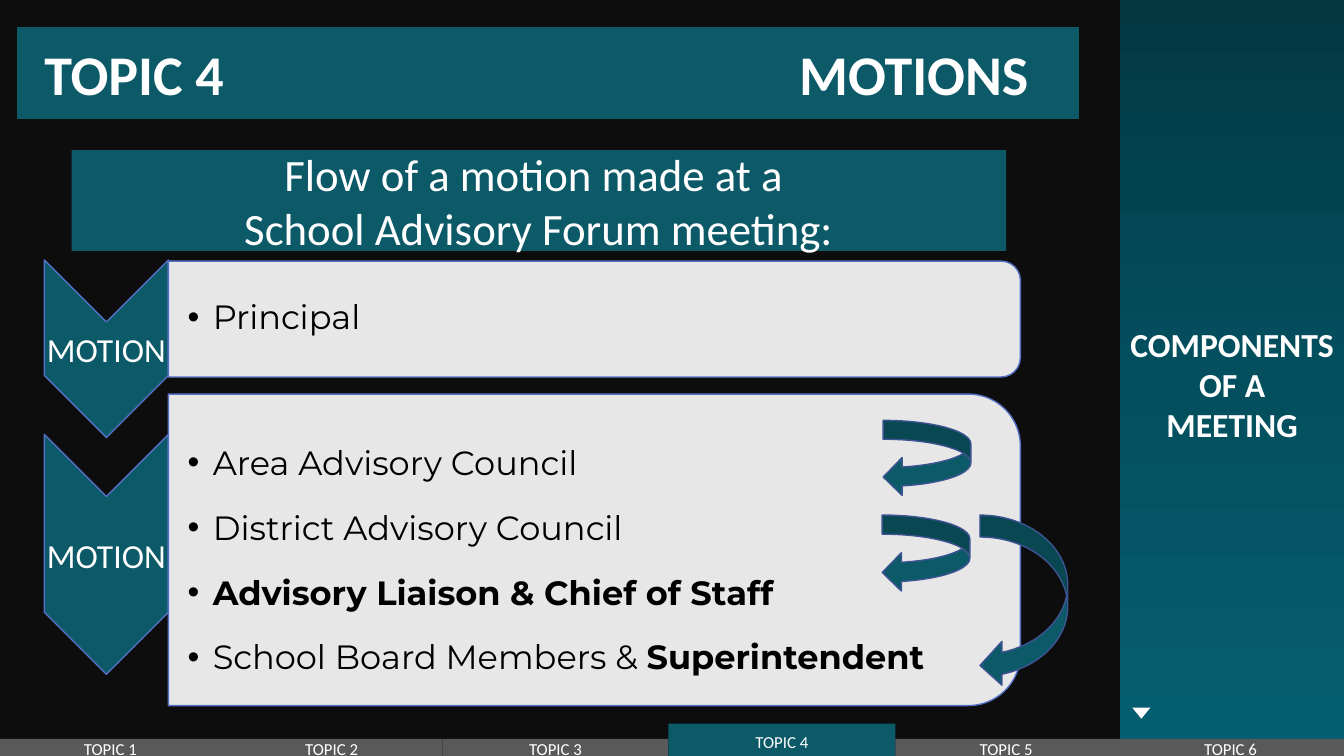
import copy
import dataclasses
import itertools

import pptx
import pptx.dml.color
import pptx.enum.shapes
import pptx.enum.text
import pptx.oxml.ns
import pptx.oxml.xmlchemy
import pptx.util

Inches = pptx.util.Inches
Pt = pptx.util.Pt
Shape = pptx.enum.shapes.MSO_SHAPE
Align = pptx.enum.text.PP_ALIGN
Anchor = pptx.enum.text.MSO_ANCHOR
qn = pptx.oxml.ns.qn


@dataclasses.dataclass(frozen=True)
class Theme:
    background: str = "0D0D0D"
    teal: str = "0C5968"
    gray: str = "595959"
    white: str = "FFFFFF"
    black: str = "000000"
    panel_line: str = "5370C5"
    arrow_line: str = "3D5392"
    sidebar: tuple = ((0, "033742"), (0.5, "044F5E"), (1, "055E6F"))
    sans: str = "Calibri"
    list_font: str = "Montserrat"
    title_size: int = 40
    subtitle_size: int = 32
    text_size: int = 24
    tab_size: int = 12


def rgb(value):
    return pptx.dml.color.RGBColor.from_string(value)


def set_values(target, values):
    for name, value in values.items():
        setattr(target, name, value)


def add_element(parent, tag, **attributes):
    element = parent.makeelement(qn(tag), attributes)
    parent.append(element)
    return element


class SlideBuilder:
    def __init__(self, slide, theme):
        self.slide = slide
        self.theme = theme
        slide.background.fill.solid()
        slide.background.fill.fore_color.rgb = rgb(theme.background)

    def shape(self, kind, box, fill, line=None, rotation=0, opacity=None):
        shape = self.slide.shapes.add_shape(kind, *map(Inches, box))
        shape.shadow.inherit = False
        shape.rotation = rotation
        shape.fill.solid()
        shape.fill.fore_color.rgb = rgb(fill)
        if opacity is not None:
            color = shape._element.spPr.find(qn("a:solidFill"))[0]
            add_element(color, "a:alpha", val=str(opacity * 1000))
        if line:
            shape.line.color.rgb = rgb(line)
            shape.line.width = Pt(1)
        else:
            shape.line.fill.background()
        return shape

    def gradient(self, shape, stops):
        """Fill a shape from top to bottom with three colour stops."""
        shape.fill.gradient()
        shape.fill.gradient_angle = 270
        stop_list = shape._element.spPr.find(".//" + qn("a:gsLst"))
        stop_list.insert(1, copy.deepcopy(stop_list[0]))
        for stop, (position, color) in zip(shape.fill.gradient_stops, stops):
            stop.position = position
            stop.color.rgb = rgb(color)

    def frame(self, shape, margins=(0.1, 0.05, 0.1, 0.05)):
        sides = ("margin_left", "margin_top", "margin_right", "margin_bottom")
        values = dict(zip(sides, map(Inches, margins)))
        values.update(word_wrap=True, vertical_anchor=Anchor.MIDDLE,
                      auto_size=pptx.enum.text.MSO_AUTO_SIZE.NONE)
        set_values(shape.text_frame, values)
        return shape.text_frame

    def paragraph(self, frame, index, runs, font, layout, mark=None):
        """Write (text, bold) runs; mark adds a bullet or tab first."""
        paragraph = frame.add_paragraph() if index else frame.paragraphs[0]
        if mark:
            mark(paragraph._p.get_or_add_pPr())
        set_values(paragraph, {"space_before": Pt(0), **layout})
        for text, bold in runs:
            run = paragraph.add_run()
            run.text = text
            color = font["color"]
            set_values(run.font, {"name": font["name"], "bold": bold,
                                  "size": Pt(font["size"])})
            run.font.color.rgb = rgb(color)

    def centred(self, shape, lines, size, bold=False, **frame_options):
        frame = self.frame(shape, **frame_options)
        font = {"name": self.theme.sans, "size": size, "color": self.theme.white}
        for index, line in enumerate(lines):
            self.paragraph(frame, index, [(line, bold)], font,
                           {"alignment": Align.CENTER})

    def place(self, placeholder, box):
        names = ("left", "top", "width", "height")
        set_values(placeholder, dict(zip(names, map(Inches, box))))
        placeholder._element.getparent().append(placeholder._element)

    def title(self, text, box, tab_position):
        title = self.slide.shapes.title
        self.place(title, box)
        title.fill.solid()
        title.fill.fore_color.rgb = rgb(self.theme.teal)

        def right_tab(properties):
            tabs = add_element(properties, "a:tabLst")
            add_element(tabs, "a:tab", pos=str(Inches(tab_position)), algn="r")

        font = {"name": self.theme.sans, "size": self.theme.title_size,
                "color": self.theme.white}
        self.paragraph(self.frame(title, (0.27, 0.12, 0.1, 0.12)), 0,
                       [(text, True)], font, {"alignment": Align.LEFT}, right_tab)

    def bullets(self, placeholder, items, box, line_spacing):
        self.place(placeholder, box)
        frame = self.frame(placeholder, (0.19, 0.02, 0.02, 0.02))

        def bullet(properties):
            properties.set("marL", str(Inches(0.25)))
            properties.set("indent", str(-Inches(0.25)))
            add_element(properties, "a:buFont", typeface="Arial")
            add_element(properties, "a:buChar", char="•")

        font = {"name": self.theme.list_font, "size": self.theme.text_size,
                "color": self.theme.black}
        layout = {"alignment": Align.LEFT, "line_spacing": line_spacing,
                  "space_after": Pt(3)}
        for index, runs in enumerate(items):
            self.paragraph(frame, index, runs, font, layout, bullet)

    def turned(self, kind, box, fill, opacity=None):
        """Add a shape turned a quarter so that it covers the given box."""
        left, top, width, height = box
        shift = (width - height) / 2
        self.shape(kind, (left + shift, top - shift, height, width), fill,
                   self.theme.panel_line, 90, opacity)

    def caption(self, text, box):
        label = self.slide.shapes.add_textbox(*map(Inches, box))
        self.centred(label, [text], self.theme.text_size, margins=(0.02,) * 4)


def main():
    presentation = pptx.Presentation()
    set_values(presentation, {"slide_width": Inches(13.33),
                              "slide_height": Inches(7.5)})
    theme = Theme()
    slide = presentation.slides.add_slide(presentation.slide_layouts[3])
    builder = SlideBuilder(slide, theme)

    subtitle = builder.shape(Shape.RECTANGLE, (0.71, 1.49, 9.27, 1), theme.teal)
    builder.centred(subtitle, ["Flow of a motion made at a ",
                               "School Advisory Forum meeting:"],
                    theme.subtitle_size)
    builder.title("TOPIC 4\tMOTIONS", (0.17, 0.27, 10.53, 0.91), 9.76)

    sidebar = builder.shape(Shape.RECTANGLE, (11.11, 0, 2.22, 7.35), theme.teal)
    builder.gradient(sidebar, theme.sidebar)
    builder.centred(sidebar, ["COMPONENTS", "OF A", "MEETING"], theme.text_size,
                    bold=True, margins=(0.05, 0.32, 0.05, 0.05))
    builder.shape(Shape.ISOSCELES_TRIANGLE, (11.23, 7.02, 0.18, 0.11),
                  theme.white, rotation=180)

    tab_widths = (2.19, 2.2, 2.24, 2.25, 2.2, 2.25)
    tab_lefts = itertools.accumulate(tab_widths, initial=0)
    for number, (left, width) in enumerate(zip(tab_lefts, tab_widths), 1):
        top, height, fill = ((7.18, 0.35, theme.teal) if number == 4
                             else (7.33, 0.2, theme.gray))
        tab = builder.shape(Shape.RECTANGLE, (left, top, width, height), fill)
        builder.centred(tab, [f"TOPIC {number}"], theme.tab_size)

    first_list = [[("Principal", False)]]
    second_list = [
        [("Area Advisory Council", False)],
        [("District Advisory Council", False)],
        [("Advisory Liaison & Chief of Staff", True)],
        [("School Board Members & ", False), ("Superintendent", True)],
    ]
    # Items, line spacing, then top and height of chevron, panel and list
    stages = (
        (first_list, 0.9, (2.58, 1.76), (2.59, 1.15), (2.65, 1.03)),
        (second_list, 1.5, (4.31, 2.38), (3.91, 3.09), (4.06, 2.78)),
    )
    bodies = list(slide.placeholders)[1:]
    for body, (items, spacing, chevron, panel, text) in zip(bodies, stages):
        builder.turned(Shape.CHEVRON, (0.44, chevron[0], 1.23, chevron[1]), theme.teal)
        builder.caption("MOTION", (0.44, chevron[0] + 0.62, 1.23, chevron[1] - 1.23))
        builder.turned(Shape.ROUND_2_SAME_RECTANGLE,
                       (1.67, panel[0], 8.45, panel[1]), theme.white, 90)
        builder.bullets(body, items, (1.67, text[0], 8.3, text[1]), spacing)

    for left, top, height in ((8.76, 4.17, 0.75), (8.75, 5.11, 0.76), (9.72, 5.11, 1.71)):
        builder.shape(Shape.CURVED_LEFT_ARROW, (left, top, 0.87, height),
                      theme.teal, theme.arrow_line)
    presentation.save("out.pptx")


if __name__ == "__main__":
    main()
